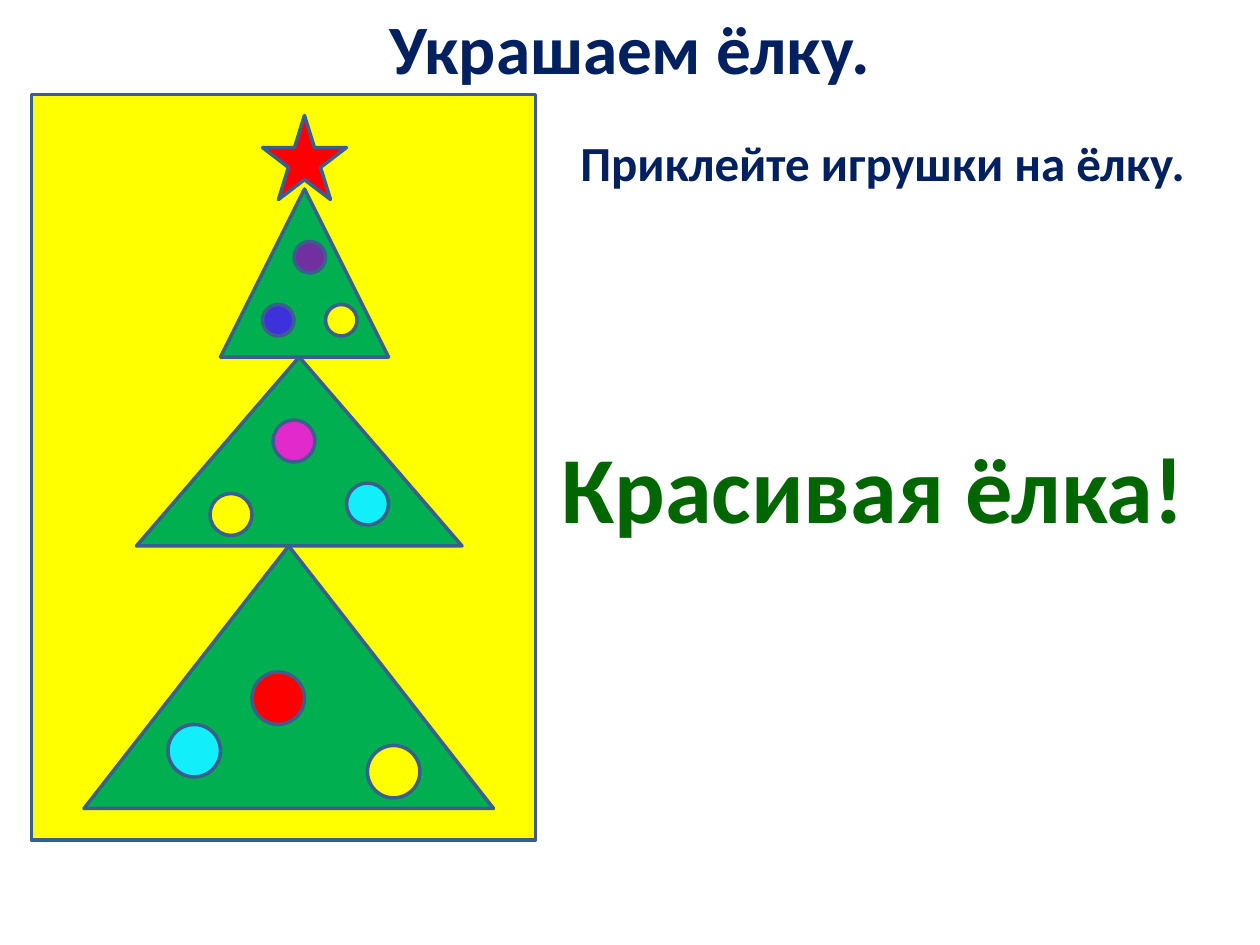
from pptx import Presentation
from pptx.dml.color import RGBColor
from pptx.enum.shapes import MSO_SHAPE
from pptx.enum.text import MSO_ANCHOR, PP_ALIGN
from pptx.util import Pt

FONT = "Calibri"
NAVY, DARK_GREEN, OUTLINE = "002060", "006600", "3A5F8C"
YELLOW, RED, CYAN, FIR_GREEN = "FFFF00", "FF0000", "12EFFA", "00B050"

TITLE = "Украшаем ёлку."
TITLE_BOX = (36, 0, 648, 54)
CAPTIONS_BOX = (12, 72, 672, 410)
# text, size, colour, space before
CAPTIONS = [
    ("Приклейте игрушки на ёлку.", 28, NAVY, 0),
    ("Красивая ёлка!", 54, DARK_GREEN, 136),
]

CARD = (18, 54, 288, 426)
STAR = (150, 66, 48, 48)
# Tiers of the tree, bottom first; each ball is left, top, colour
TIERS = [
    {"box": (48, 312, 234, 150), "ball_size": 30,
     "balls": [(144, 384, RED), (96, 414, CYAN), (210, 426, YELLOW)]},
    {"box": (78, 204, 186, 108), "ball_size": 24,
     "balls": [(198, 276, CYAN), (120, 282, YELLOW), (156, 240, "E22ACC")]},
    {"box": (126, 108, 96, 96), "ball_size": 18,
     "balls": [(168, 138, "7030A0"), (150, 174, "3D31DB"), (186, 174, YELLOW)]},
]


def rgb(color):
    return RGBColor.from_string(color)


def points(box):
    return [Pt(value) for value in box]


def add_figure(slide, preset, box, color):
    figure = slide.shapes.add_shape(preset, *points(box))
    figure.shadow.inherit = False
    figure.fill.solid()
    figure.fill.fore_color.rgb = rgb(color)
    figure.line.color.rgb = rgb(OUTLINE)
    figure.line.width = Pt(2)


def write(paragraph, text, size, color, align):
    paragraph.alignment = align
    run = paragraph.add_run()
    run.text = text
    run.font.name = FONT
    run.font.size = Pt(size)
    run.font.bold = True
    run.font.color.rgb = rgb(color)


def add_title(slide):
    title = slide.shapes.title
    title.left, title.top, title.width, title.height = points(TITLE_BOX)
    title.text_frame.vertical_anchor = MSO_ANCHOR.MIDDLE
    write(title.text_frame.paragraphs[0], TITLE, 39.6, NAVY, PP_ALIGN.CENTER)


def add_captions(slide):
    frame = slide.shapes.add_textbox(*points(CAPTIONS_BOX)).text_frame
    frame.word_wrap = True
    for index, (text, size, color, gap) in enumerate(CAPTIONS):
        paragraph = frame.add_paragraph() if index else frame.paragraphs[0]
        paragraph.space_before = Pt(gap)
        write(paragraph, text, size, color, PP_ALIGN.RIGHT)


def add_tree(slide):
    for tier in TIERS:
        add_figure(slide, MSO_SHAPE.ISOSCELES_TRIANGLE, tier["box"], FIR_GREEN)
    for tier in TIERS:
        size = tier["ball_size"]
        for left, top, color in tier["balls"]:
            add_figure(slide, MSO_SHAPE.OVAL, (left, top, size, size), color)
    add_figure(slide, MSO_SHAPE.STAR_5_POINT, STAR, RED)


def main():
    deck = Presentation()
    deck.slide_width, deck.slide_height = Pt(720), Pt(540)
    slide = deck.slides.add_slide(deck.slide_layouts[5])
    add_title(slide)
    add_figure(slide, MSO_SHAPE.RECTANGLE, CARD, YELLOW)
    add_captions(slide)
    add_tree(slide)
    deck.save("out.pptx")


if __name__ == "__main__":
    main()
